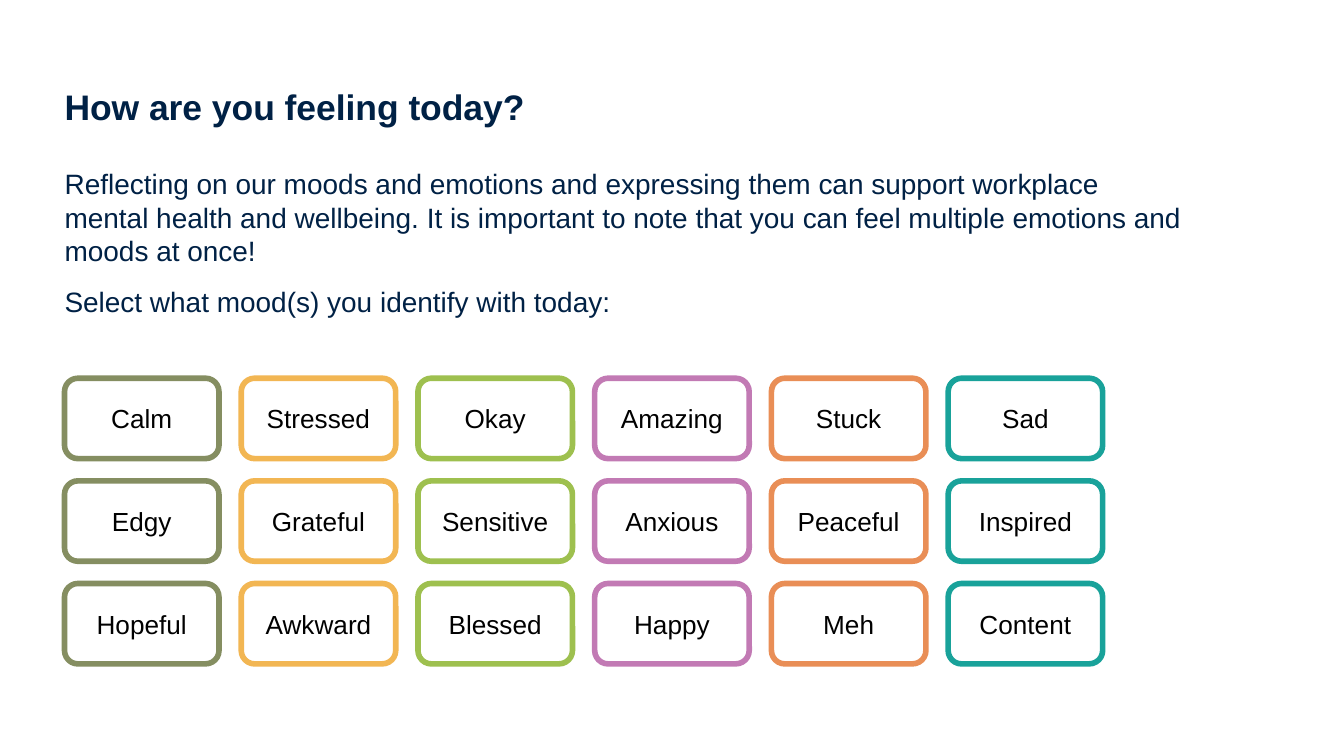
"""Build the mood check-in slide with its grid of mood buttons."""
import dataclasses

import pptx
import pptx.dml.color
import pptx.enum.shapes
import pptx.enum.text
import pptx.oxml
import pptx.oxml.ns
import pptx.util
from pptx.util import Cm, Pt

COLORS = {
    "navy": "002145", "black": "000000", "white": "FFFFFF",
    "olive": "858E61", "amber": "F2B653", "green": "9EC04F",
    "mauve": "C27AB4", "orange": "E98E56", "teal": "19A29A",
}
ALIGN = pptx.enum.text.PP_ALIGN
ANCHOR = pptx.enum.text.MSO_ANCHOR
LEFT, TEXT_W = 1.22, 21.29
GRID_TOP, STEP_X, STEP_Y = 7.15, 3.34, 1.94
BUTTON_W, BUTTON_H = 2.92, 1.52

TITLE_FONT = {"name": "Arial", "size": Pt(19), "bold": True}
BODY_FONT = {"name": "Arial", "size": Pt(15)}
BUTTON_FONT = {"name": "Arial", "size": Pt(14)}
TITLE_PARAGRAPH = {"alignment": ALIGN.LEFT}
BODY_PARAGRAPH = {"alignment": ALIGN.LEFT, "space_before": Pt(0),
                  "space_after": Pt(9), "line_spacing": Pt(18)}
BUTTON_PARAGRAPH = {"alignment": ALIGN.CENTER}


@dataclasses.dataclass(frozen=True)
class MoodColumn:
    color: str
    moods: tuple[str, ...]


COLUMNS = (
    MoodColumn("olive", ("Calm", "Edgy", "Hopeful")),
    MoodColumn("amber", ("Stressed", "Grateful", "Awkward")),
    MoodColumn("green", ("Okay", "Sensitive", "Blessed")),
    MoodColumn("mauve", ("Amazing", "Anxious", "Happy")),
    MoodColumn("orange", ("Stuck", "Peaceful", "Meh")),
    MoodColumn("teal", ("Sad", "Inspired", "Content")),
)
TITLE = "How are you feeling today?"
BODY = (
    "Reflecting on our moods and emotions and expressing them can support "
    "workplace mental health and wellbeing. It is important to note that you "
    "can feel multiple emotions and moods at once!",
    "Select what mood(s) you identify with today:",
)


def rgb(name: str) -> pptx.dml.color.RGBColor:
    return pptx.dml.color.RGBColor.from_string(COLORS[name])


def apply(target: object, values: dict) -> None:
    for key, value in values.items():
        setattr(target, key, value)


def place(sp, left: float, top: float, width: float, height: float) -> None:
    apply(sp, {"left": Cm(left), "top": Cm(top),
               "width": Cm(width), "height": Cm(height)})


def remove_bullet(p) -> None:
    pPr = p._p.get_or_add_pPr()
    pPr.set("marL", "0")
    pPr.set("indent", "0")
    pPr.append(pptx.oxml.parse_xml(
        f"<a:buNone {pptx.oxml.ns.nsdecls('a')}/>"))


def write(sp, lines: tuple[str, ...], font: dict, paragraph: dict, color: str,
          anchor: ANCHOR, inset_x: float = 0, inset_y: float = 0) -> None:
    tf = sp.text_frame
    apply(tf, {"word_wrap": True, "vertical_anchor": anchor,
               "auto_size": pptx.enum.text.MSO_AUTO_SIZE.NONE,
               "margin_left": Cm(inset_x), "margin_right": Cm(inset_x),
               "margin_top": Cm(inset_y), "margin_bottom": Cm(inset_y)})
    tf.text = "\n".join(lines)
    for p in tf.paragraphs:
        remove_bullet(p)
        apply(p, paragraph)
        for r in p.runs:
            apply(r.font, font)
            r.font.color.rgb = rgb(color)


def add_button(s, mood: str, color: str, left: float, top: float) -> None:
    sp = s.shapes.add_shape(
        pptx.enum.shapes.MSO_SHAPE.ROUNDED_RECTANGLE,
        Cm(left), Cm(top), Cm(BUTTON_W), Cm(BUTTON_H))
    sp.shadow.inherit = False
    sp.fill.solid()
    sp.fill.fore_color.rgb = rgb("white")
    sp.line.color.rgb = rgb(color)
    sp.line.width = Pt(3)
    write(sp, (mood,), BUTTON_FONT, BUTTON_PARAGRAPH, "black",
          ANCHOR.MIDDLE, 0.18, 0.1)


def main() -> None:
    prs = pptx.Presentation()
    prs.slide_width, prs.slide_height = Cm(25.4), Cm(14.29)
    s = prs.slides.add_slide(prs.slide_layouts[1])
    title, body = s.shapes.title, s.placeholders[1]
    place(title, LEFT, 1.14, TEXT_W, 1.73)
    write(title, (TITLE,), TITLE_FONT, TITLE_PARAGRAPH, "navy", ANCHOR.MIDDLE)
    place(body, LEFT, 3.15, TEXT_W, 10.21)
    write(body, BODY, BODY_FONT, BODY_PARAGRAPH, "navy", ANCHOR.TOP)
    for i, column in enumerate(COLUMNS):
        for j, mood in enumerate(column.moods):
            add_button(s, mood, column.color,
                       LEFT + i * STEP_X, GRID_TOP + j * STEP_Y)
    prs.save("out.pptx")


if __name__ == "__main__":
    main()
